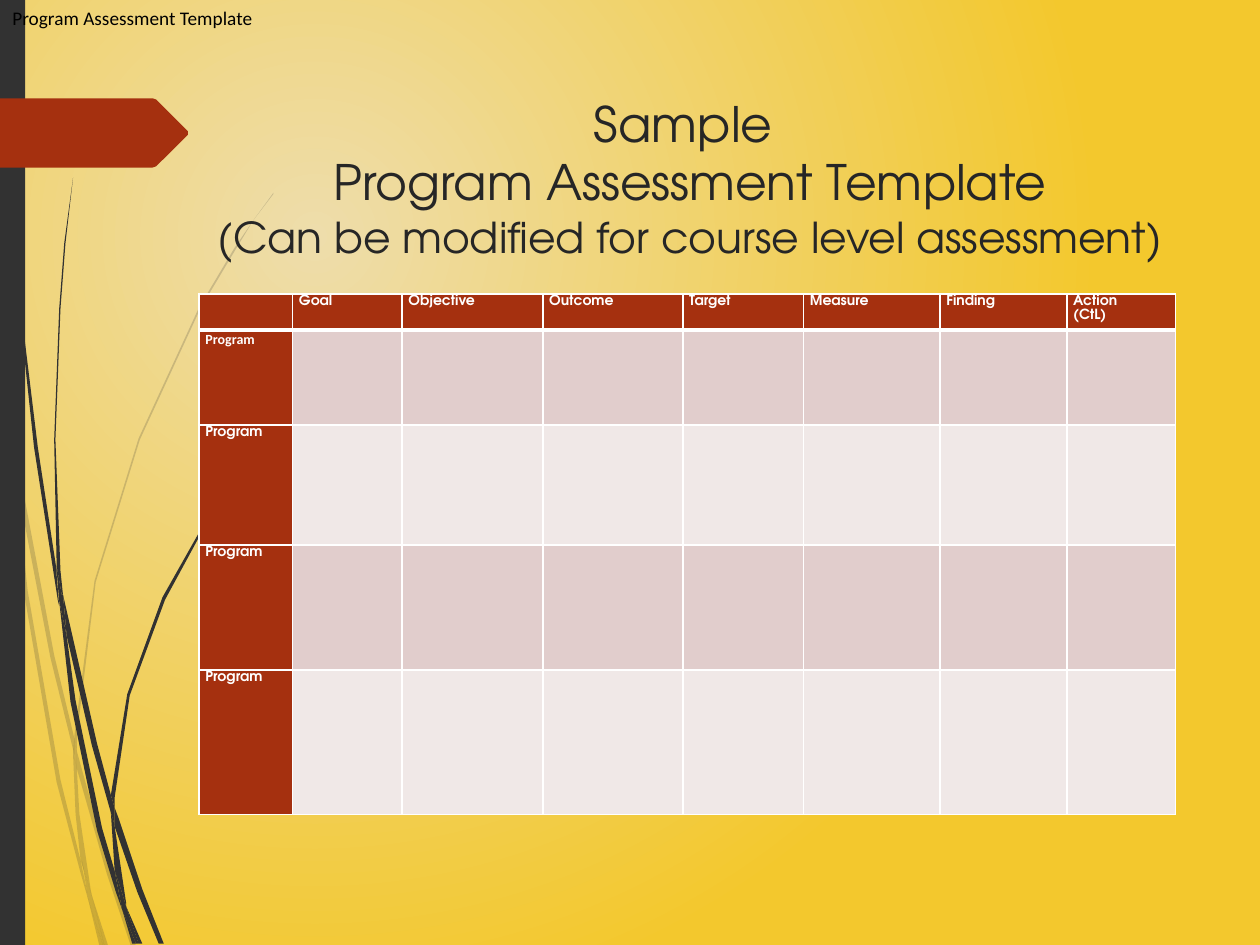
import copy

from lxml import etree
from pptx import Presentation
from pptx.dml import color
from pptx.enum import shapes, text
from pptx.oxml import ns
from pptx.util import Pt

DARK, RED, WHITE = "323232", "A5300F", "FFFFFF"
BANDS = ["E1CDCC", "F0E8E7"]
DISPLAY, BODY = "TeX Gyre Adventor", "Calibri"
GRID = Pt(0.72)

PALE_STRANDS = [
    [(8, 350), (6, 322), (0, 282), (0, 299), (7, 344)],
    [(40, 522), (59, 599), (59, 586), (43, 520), (10, 345), (12, 376)],
    [(64, 607), (61, 596), (61, 610), (85, 694), (104, 751), (108, 751), (88, 692)],
    [(83, 751), (86, 751), (73, 711)],
    [(64, 683), (48, 619), (22, 469), (12, 376), (8, 350), (19, 470), (45, 621),
     (64, 693), (70, 714), (69, 707)],
    [(58, 599), (60, 646), (64, 683), (67, 692), (73, 711), (72, 706), (63, 646),
     (61, 610), (61, 608)],
    [(61, 584), (76, 462), (111, 349), (159, 245), (187, 198), (201, 175), (217, 154),
     (217, 153), (201, 175), (186, 197), (158, 244), (110, 348), (75, 461), (59, 584),
     (59, 586), (61, 596)],
    [(70, 714), (79, 751), (82, 751)],
    [(61, 608), (61, 610), (61, 596), (59, 586), (58, 599)],
    [(67, 692), (65, 683), (69, 707), (70, 714), (82, 751), (83, 751), (73, 711)],
]
DARK_STRANDS = [
    [(5, 110), (14, 233), (27, 355), (46, 477), (47, 481), (45, 457), (45, 453),
     (30, 355), (15, 232), (6, 109), (4, 48), (3, 0), (2, 0), (3, 48)],
    [(73, 592), (88, 645), (88, 633), (88, 631), (77, 590), (50, 472), (53, 505)],
    [(94, 649), (91, 641), (91, 656), (109, 708), (126, 749), (130, 749), (113, 706)],
    [(91, 691), (81, 657), (60, 556), (53, 505), (47, 477), (56, 557), (77, 659),
     (92, 708), (97, 722), (96, 717)],
    [(50, 472), (48, 453), (44, 349), (48, 245), (52, 193), (58, 141), (57.5, 141),
     (51, 193), (47, 245), (43, 349), (45, 449), (49, 472)],
    [(110, 749), (113, 749), (100, 719)],
    [(47, 477), (53, 505), (50, 472), (49, 472), (45, 449), (45, 453)],
    [(91, 633), (103, 552), (131, 476), (169, 406), (191, 374), (203, 359), (216, 344),
     (215, 344), (203, 358), (191, 373), (168, 405), (129, 474), (101, 551), (88, 631),
     (91, 641)],
    [(97, 722), (105, 749), (108, 749)],
    [(88, 645), (91, 691), (96, 706), (100, 719), (100, 716), (91, 656), (90, 651)],
    [(88, 645), (90, 651), (91, 656), (91, 641), (88, 631), (88, 633)],
    [(96, 706), (91, 691), (96, 717), (97, 722), (108, 749), (110, 749), (100, 719)],
]
TAG = [(149, 107), (124, 132), (121, 133), (0, 133), (0, 78), (121, 78), (124, 79), (149, 104)]


def rgb(value):
    return color.RGBColor.from_string(value)


class SlideBuilder:
    def __init__(self, slide):
        self.slide = slide

    def background(self, centre, edge):
        fill = self.slide.background.fill
        fill.gradient()
        for stop, value in zip(fill.gradient_stops, (centre, edge)):
            stop.color.rgb = rgb(value)
        gradient = self.slide.element.find(".//" + ns.qn("a:gradFill"))
        gradient.remove(gradient.find(ns.qn("a:lin")))
        radial = etree.SubElement(gradient, ns.qn("a:path"), path="circle")
        etree.SubElement(radial, ns.qn("a:fillToRect"), l="50000", t="50000", r="100000", b="100000")

    def paint(self, shape, fill, opacity=100):
        shape.shadow.inherit = False
        shape.fill.solid()
        shape.fill.fore_color.rgb = rgb(fill)
        shape.line.fill.background()
        if opacity < 100:
            solid = shape.element.spPr.find(".//" + ns.qn("a:srgbClr"))
            etree.SubElement(solid, ns.qn("a:alpha"), val=str(opacity * 1000))

    def outline(self, points, fill, opacity=100):
        builder = self.slide.shapes.build_freeform(*points[0], scale=GRID)
        builder.add_line_segments(points[1:], close=True)
        self.paint(builder.convert_to_shape(), fill, opacity)

    def bar(self, left, top, width, height, fill):
        shape = self.slide.shapes.add_shape(
            shapes.MSO_SHAPE.RECTANGLE, Pt(left), Pt(top), Pt(width), Pt(height))
        self.paint(shape, fill)

    def format_run(self, run, size, value, font=DISPLAY, bold=False):
        run.font.size = Pt(size)
        run.font.name = font
        run.font.bold = bold
        run.font.color.rgb = rgb(value)

    def title(self, lines, sizes, left, top, width, height):
        title = self.slide.shapes.title
        title.left, title.top, title.width, title.height = Pt(left), Pt(top), Pt(width), Pt(height)
        title.element.getparent().append(title.element)
        frame = title.text_frame
        frame.text = "\v".join(lines)
        frame.word_wrap = True
        frame.auto_size = text.MSO_AUTO_SIZE.NONE
        frame.vertical_anchor = text.MSO_ANCHOR.MIDDLE
        paragraph = frame.paragraphs[0]
        paragraph.alignment = text.PP_ALIGN.CENTER
        for run, size in zip(paragraph.runs, sizes):
            self.format_run(run, size, "262626")
        for line_break in title.element.iter(ns.qn("a:br")):
            previous = line_break.getprevious().find(ns.qn("a:rPr"))
            line_break.append(copy.deepcopy(previous))

    def label(self, content, left, top, width, height):
        box = self.slide.shapes.add_textbox(Pt(left), Pt(top), Pt(width), Pt(height))
        box.text_frame.text = content
        box.text_frame.word_wrap = False
        self.format_run(box.text_frame.paragraphs[0].runs[0], 11, "000000", BODY)

    def border(self, properties, side, width):
        line = etree.SubElement(properties, ns.qn("a:ln" + side), w=str(Pt(width)))
        solid = etree.SubElement(line, ns.qn("a:solidFill"))
        etree.SubElement(solid, ns.qn("a:srgbClr"), val=WHITE)

    def table(self, headers, row_label, left, top, widths, heights):
        frame = self.slide.shapes.add_table(
            len(heights), len(widths), Pt(left), Pt(top), Pt(sum(widths)), Pt(sum(heights)))
        table = frame.table
        for column, width in zip(table.columns, widths):
            column.width = Pt(width)
        for row, height in zip(table.rows, heights):
            row.height = Pt(height)
        for index, (cell, element) in enumerate(zip(table.iter_cells(), frame.element.iter(ns.qn("a:tc")))):
            row, column = divmod(index, len(widths))
            cell.margin_left = cell.margin_right = Pt(3.6)
            cell.margin_top = cell.margin_bottom = 0
            properties = element.find(ns.qn("a:tcPr"))
            for side in "LRTB":
                heavy = (row, side) in ((0, "B"), (1, "T"))
                self.border(properties, side, 3 if heavy else 1)
            cell.fill.solid()
            heading = row == 0 or column == 0
            cell.fill.fore_color.rgb = rgb(RED if heading else BANDS[(row - 1) % 2])
            if heading:
                cell.text_frame.text = headers[column] if row == 0 else row_label
            for paragraph in cell.text_frame.paragraphs:
                paragraph.line_spacing = 1.07
                for run in paragraph.runs:
                    self.format_run(run, 8, WHITE, BODY if row == 1 else DISPLAY, True)
        for paragraph in frame.element.iter(ns.qn("a:p")):
            if paragraph.find(ns.qn("a:r")) is None:
                etree.SubElement(paragraph, ns.qn("a:endParaRPr"), sz="800")


def main():
    presentation = Presentation()
    presentation.slide_width, presentation.slide_height = Pt(720), Pt(540)
    builder = SlideBuilder(presentation.slides.add_slide(presentation.slide_layouts[5]))
    builder.background("EEDDAB", "F3C82D")
    for strand in PALE_STRANDS:
        builder.outline(strand, DARK, 20)
    for strand in DARK_STRANDS:
        builder.outline(strand, DARK)
    builder.bar(0, 0, 14.4, 540, DARK)
    builder.outline(TAG, RED)
    builder.title(
        ["Sample ", "Program Assessment Template", "(Can be modified for course level assessment)"],
        [27.9, 27.9, 24.3], 113.75, 51, 561, 101)
    builder.table(
        ["", "Goal", "Objective", "Outcome", "Target", "Measure", "Finding", "Action\n(CtL)"],
        "Program", 113.75, 168, [53.5, 62.5, 80.5, 80, 69, 78, 72.5, 62], [20.5, 54.5, 68.5, 71.5, 82.5])
    builder.label("Program Assessment Template", 0, 0, 720, 36)
    presentation.save("out.pptx")


if __name__ == "__main__":
    main()
